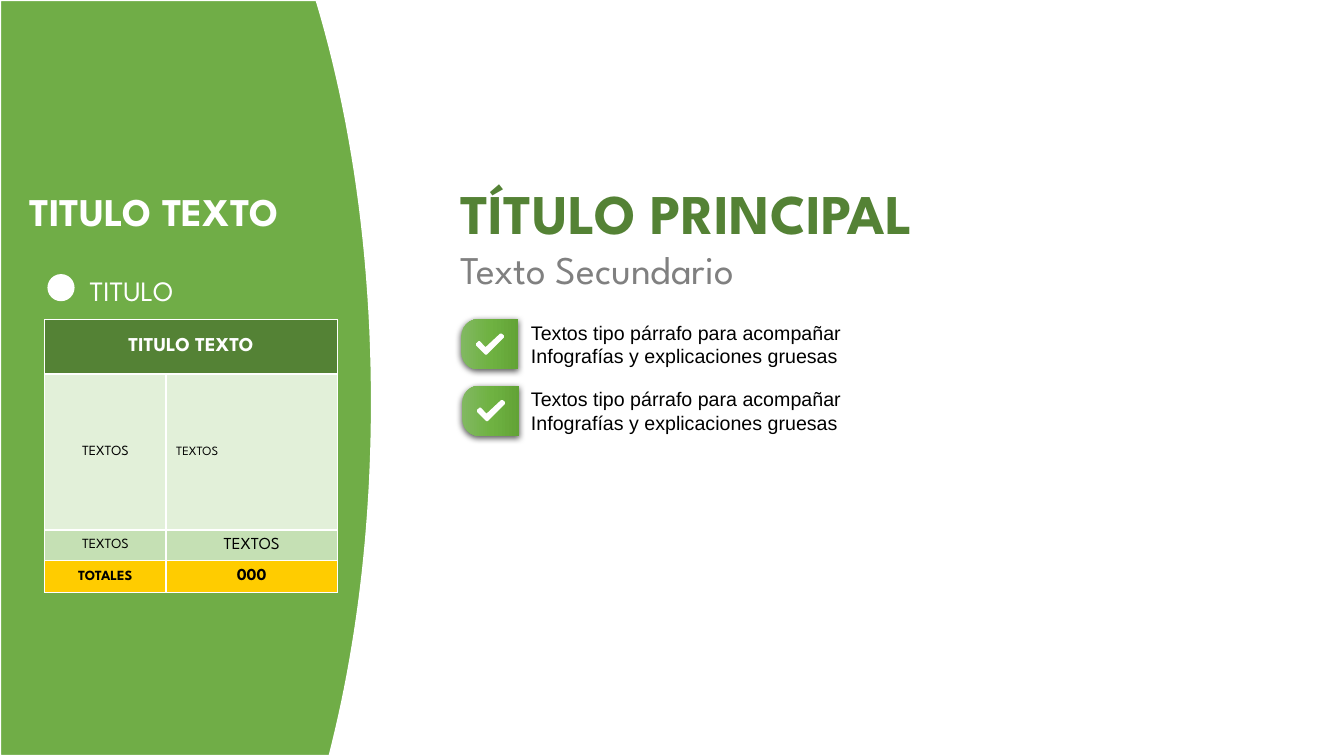
from dataclasses import dataclass
from typing import NamedTuple

from lxml.etree import SubElement
from pptx import Presentation
from pptx.dml.color import RGBColor
from pptx.enum.shapes import MSO_SHAPE
from pptx.enum.text import MSO_ANCHOR, PP_ALIGN
from pptx.oxml.ns import qn
from pptx.util import Pt

WHITE = RGBColor(0xFF, 0xFF, 0xFF)
BLACK = RGBColor(0x00, 0x00, 0x00)
GRAY = RGBColor(0x80, 0x80, 0x80)
CHECK_WHITE = RGBColor(0xFE, 0xFE, 0xFE)
GREEN = RGBColor(0x70, 0xAD, 0x47)
DARK_GREEN = RGBColor(0x54, 0x82, 0x35)
PALE_GREEN = RGBColor(0xE2, 0xF0, 0xD9)
SOFT_GREEN = RGBColor(0xC5, 0xE0, 0xB4)
YELLOW = RGBColor(0xFF, 0xCC, 0x00)
BADGE_STOPS = (
    (0, RGBColor(0x81, 0xB8, 0x61)),
    (50, RGBColor(0x6F, 0xB2, 0x42)),
    (100, RGBColor(0x62, 0xA3, 0x36)),
)
DISPLAY = "League Spartan"
BODY = "Arial"


class Point(NamedTuple):
    x: float
    y: float


@dataclass
class Bullet:
    left: float
    top: float
    lines: tuple[str, ...]


@dataclass
class Entry:
    text: str
    size: float
    fill: RGBColor
    color: RGBColor = BLACK
    bold: bool = False
    align: PP_ALIGN = PP_ALIGN.CENTER


BULLET_LINES = ("Textos tipo párrafo para acompañar", "Infografías y explicaciones gruesas")
BULLETS = (Bullet(331.9, 225.4, BULLET_LINES), Bullet(332.6, 272.9, BULLET_LINES))
CHECK = tuple(Point(*pair) for pair in (
    (20.2, 1.5), (20.2, 3), (8, 15.2), (6.8, 15.2), (0.3, 8.6), (0.3, 7.2),
    (2, 5.6), (3, 5.6), (7, 9.9), (17.4, 0.2), (18.6, 0.2),
))
COLUMN_WIDTHS = (86.7, 122.4)
ROW_HEIGHTS = (38.9, 111.4, 22, 22.8)
ROWS = (
    (Entry("TITULO TEXTO", 14, DARK_GREEN, WHITE, True),),
    (Entry("TEXTOS", 10, PALE_GREEN),
     Entry("TEXTOS", 9, PALE_GREEN, align=PP_ALIGN.LEFT)),
    (Entry("TEXTOS", 10, SOFT_GREEN), Entry("TEXTOS", 12, SOFT_GREEN)),
    (Entry("TOTALES", 10, YELLOW, bold=True), Entry("000", 12, YELLOW, bold=True)),
)


def write(para, text: str, *, size: float, color: RGBColor, font: str = DISPLAY,
          bold: bool = False) -> None:
    span = para.add_run()
    span.text = text
    span.font.name = font
    span.font.size = Pt(size)
    span.font.bold = bold
    span.font.color.rgb = color


def add_box(page, left: float, top: float, width: float, height: float):
    box = page.shapes.add_textbox(Pt(left), Pt(top), Pt(width), Pt(height))
    box.text_frame.word_wrap = True
    return box.text_frame


def paint(shape, color: RGBColor) -> None:
    shape.shadow.inherit = False
    shape.fill.solid()
    shape.fill.fore_color.rgb = color
    shape.line.fill.background()


def add_outline(page, points: list[Point], color: RGBColor):
    corners = [(Pt(point.x), Pt(point.y)) for point in points]
    builder = page.shapes.build_freeform(*corners[0], scale=1.0)
    builder.add_line_segments(corners[1:], close=True)
    shape = builder.convert_to_shape()
    paint(shape, color)
    return shape


def curve(start: Point, first: Point, second: Point, end: Point,
          steps: int = 24) -> list[Point]:
    points = []
    for step in range(steps + 1):
        t = step / steps
        weights = ((1 - t) ** 3, 3 * t * (1 - t) ** 2, 3 * t ** 2 * (1 - t), t ** 3)
        controls = (start, first, second, end)
        points.append(Point(sum(w * c.x for w, c in zip(weights, controls)),
                            sum(w * c.y for w, c in zip(weights, controls))))
    return points


def add_panel(page) -> None:
    bulge = Point(265.7, 287.3)
    upper = curve(bulge, Point(265.7, 181.4), Point(251.3, 83.5), Point(226.1, 0))
    lower = curve(Point(235.4, 540), Point(254.9, 464.4), Point(265.7, 378.7), bulge)
    panel = add_outline(page, upper + [Point(0, 0), Point(0, 540)] + lower[:-1], GREEN)
    panel.line.color.rgb = WHITE
    panel.line.width = Pt(1.5)


def add_color(parent, color: RGBColor):
    return SubElement(parent, qn("a:srgbClr"), val=str(color))


def add_badge(page, left: float, top: float) -> None:
    badge = page.shapes.add_shape(MSO_SHAPE.ROUND_2_SAME_RECTANGLE,
                                  Pt(left), Pt(top), Pt(36), Pt(41))
    badge.rotation = 270
    badge.adjustments[0] = 0.342
    badge.adjustments[1] = 0
    badge.shadow.inherit = False
    badge.line.fill.background()
    badge.fill.gradient()
    badge.fill.gradient_angle = 270
    # Three gradient stops
    properties = badge.element.spPr
    stops = properties.find(qn("a:gradFill")).find(qn("a:gsLst"))
    for stop in list(stops):
        stops.remove(stop)
    for percent, color in BADGE_STOPS:
        add_color(SubElement(stops, qn("a:gs"), pos=str(percent * 1000)), color)
    # Soft shadow below
    shadow = SubElement(properties.find(qn("a:effectLst")), qn("a:outerShdw"),
                        blurRad=str(Pt(4.5)), dist=str(Pt(1.5)), dir="5400000",
                        algn="ctr", rotWithShape="0")
    SubElement(add_color(shadow, BLACK), qn("a:alpha"), val="63000")


def add_bullet(page, bullet: Bullet) -> None:
    add_badge(page, bullet.left, bullet.top)
    add_outline(page, [Point(bullet.left + 7.9 + p.x, bullet.top + 12.7 + p.y)
                       for p in CHECK], CHECK_WHITE)
    frame = add_box(page, 372.2, bullet.top, 351.4, 41)
    for index, line in enumerate(bullet.lines):
        para = frame.add_paragraph() if index else frame.paragraphs[0]
        write(para, line, size=14, color=BLACK, font=BODY)


def add_borders(cell) -> None:
    properties = cell._tc.get_or_add_tcPr()
    for index, side in enumerate(("lnL", "lnR", "lnT", "lnB")):
        line = SubElement(properties, qn(f"a:{side}"), w=str(Pt(1)))
        add_color(SubElement(line, qn("a:solidFill")), WHITE)
        properties.insert(index, line)


def add_summary_table(page) -> None:
    table = page.shapes.add_table(len(ROW_HEIGHTS), len(COLUMN_WIDTHS), Pt(31.9), Pt(228.3),
                                  Pt(sum(COLUMN_WIDTHS)), Pt(sum(ROW_HEIGHTS))).table
    table.first_row = table.horz_banding = False
    for column, width in zip(table.columns, COLUMN_WIDTHS):
        column.width = Pt(width)
    for row, height in zip(table.rows, ROW_HEIGHTS):
        row.height = Pt(height)
    table.cell(0, 0).merge(table.cell(0, 1))
    for cell in table.iter_cells():
        add_borders(cell)
    for row, entries in enumerate(ROWS):
        for column, entry in enumerate(entries):
            cell = table.cell(row, column)
            cell.fill.solid()
            cell.fill.fore_color.rgb = entry.fill
            cell.vertical_anchor = MSO_ANCHOR.MIDDLE
            para = cell.text_frame.paragraphs[0]
            para.alignment = entry.align
            write(para, entry.text, size=entry.size, color=entry.color, bold=entry.bold)


def main() -> None:
    deck = Presentation()
    deck.slide_width, deck.slide_height = Pt(960), Pt(540)
    page = deck.slides.add_slide(deck.slide_layouts[6])

    # Green side panel
    add_panel(page)
    write(add_box(page, 13.7, 130.3, 248.4, 41).paragraphs[0], "TITULO TEXTO",
          size=28, color=WHITE, bold=True)
    dot = page.shapes.add_shape(MSO_SHAPE.OVAL, Pt(33.9), Pt(195.8), Pt(19.4), Pt(19.4))
    paint(dot, WHITE)
    write(add_box(page, 56.9, 191.5, 163.4, 31.7).paragraphs[0], "TITULO",
          size=20, color=WHITE)
    add_summary_table(page)

    # Main heading and bullets
    heading = add_box(page, 321.8, 123.8, 396.7, 90).paragraphs[0]
    write(heading, "TÍTULO PRINCIPAL", size=40, color=DARK_GREEN, bold=True)
    heading.add_line_break()
    write(heading, "Texto Secundario", size=28, color=GRAY)
    for bullet in BULLETS:
        add_bullet(page, bullet)

    deck.save("out.pptx")


if __name__ == "__main__":
    main()
